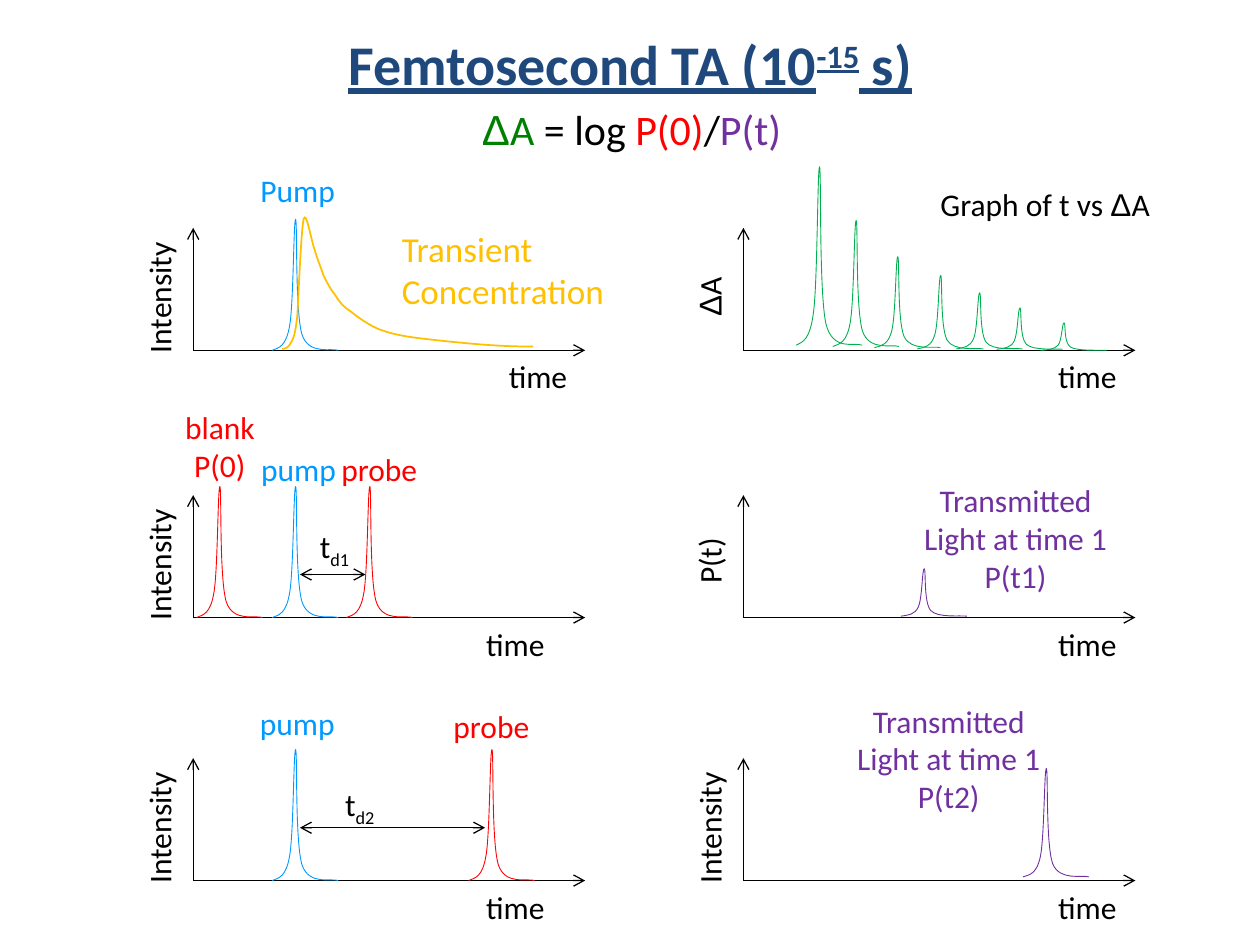
"""Build a slide on femtosecond transient absorption with six signal panels."""
from dataclasses import dataclass

from lxml import etree
from pptx import Presentation
from pptx.dml.color import RGBColor
from pptx.enum.shapes import MSO_CONNECTOR
from pptx.enum.text import MSO_ANCHOR, MSO_AUTO_SIZE, PP_ALIGN
from pptx.oxml.ns import qn
from pptx.util import Pt

STRAIGHT = MSO_CONNECTOR.STRAIGHT
MIDDLE = MSO_ANCHOR.MIDDLE
FIT, NO_FIT = MSO_AUTO_SIZE.SHAPE_TO_FIT_TEXT, MSO_AUTO_SIZE.NONE
LEFT, CENTER = PP_ALIGN.LEFT, PP_ALIGN.CENTER

PEAK = [(0, 1), (4, 0.98), (8, 0.97), (10, 0.81), (12.2, 0.64), (12.2, 0),
        (13.4, 0.01), (14.4, 0.03), (13, 0.7), (17, 0.88), (21, 1.04),
        (34, 0.98), (37.7, 1)]
DECAY = [(161.3, 199.4), (162.7, 199.4), (164.9, 198.7), (166.3, 195.8),
         (167.8, 193), (168.5, 192.2), (169.9, 180.7),
         (170.6, 168.5), (172.1, 131.8), (173.5, 125.3),
         (175, 119.5), (177.8, 137.5), (180, 143.3),
         (181.4, 148.3), (183.6, 153.4), (185, 157.7),
         (187.2, 162), (188.6, 164.9), (191.5, 168.5),
         (193.7, 172.1), (195.8, 175), (200.2, 177.8),
         (203.8, 180.7), (209.5, 185), (216, 187.9),
         (221.8, 190.1), (226.8, 191.5), (237.6, 193),
         (248.4, 194.4), (270, 196.6), (281.5, 197.3),
         (293, 198), (298.8, 198), (304.6, 198)]
GREEN_PEAKS = [(455, 94.3, 197.3), (475.9, 125.3, 198), (499.7, 146.2, 198.7),
               (524.2, 157, 199.4), (546.5, 167, 199.4),
               (569.5, 175.7, 199.6), (594.7, 184.3, 200.2)]
COL_1, COL_2 = 110.4, 424.8
ROWS = (200.2, 352.9, 503.2)
PUMP_X, PEAK_H = 155.6, 75.6


@dataclass(frozen=True)
class Theme:
    """Colours, fonts and type sizes of the slide."""
    black: str = "000000"
    pump: str = "0099FF"
    probe: str = "FF0000"
    transient: str = "FFC000"
    transmitted: str = "7030A0"
    absorbance: str = "00B050"
    delta: str = "008000"
    title: str = "1F497D"
    font: str = "Calibri"
    symbol_font: str = "Arial"
    body: int = 18
    large: int = 20
    formula: int = 24
    heading: int = 32


T = Theme()


def add_text(s, box, paras, size=T.body, align=LEFT, wrap=True, rotation=0, fit=FIT):
    """Add a text box from paragraphs of (text, colour, baseline percent) runs."""
    sp = s.shapes.add_textbox(*map(Pt, box))
    sp.rotation = rotation
    tf = sp.text_frame
    tf.word_wrap = wrap
    tf.auto_size = fit
    for i, runs in enumerate(paras):
        p = tf.add_paragraph() if i else tf.paragraphs[0]
        p.alignment = align
        for text, color, *baseline in runs:
            r = p.add_run()
            r.text = text
            r.font.size = Pt(size)
            r.font.name = T.symbol_font if text == "Δ" else T.font
            r.font.color.rgb = RGBColor.from_string(color)
            if baseline:
                r.font._element.set("baseline", str(baseline[0] * 1000))
    return sp


def add_arrow(s, x1, y1, x2, y2, ends=("tailEnd",)):
    """Add a thin straight line with open arrowheads at the named ends."""
    cn = s.shapes.add_connector(STRAIGHT, *map(Pt, (x1, y1, x2, y2)))
    cn.line.color.rgb = RGBColor.from_string(T.black)
    cn.line.width = Pt(0.75)
    sppr = cn._element.spPr
    for end in ends:
        etree.SubElement(sppr.find(qn("a:ln")), qn(f"a:{end}"), type="arrow")
    etree.SubElement(sppr, qn("a:effectLst"))


def add_curve(s, points, color, width=0.5):
    """Add an open Bezier curve from a start point and triples of points."""
    pts = [(Pt(x), Pt(y)) for x, y in points]
    fb = s.shapes.build_freeform(*pts[0])
    fb.add_line_segments(pts[1:], close=False)
    sp = fb.convert_to_shape()
    sp.shadow.inherit = False
    sp.fill.background()
    sp.line.color.rgb = RGBColor.from_string(color)
    sp.line.width = Pt(width)
    segments = list(sp._element.iter(qn("a:lnTo")))
    for i in range(0, len(segments), 3):
        bezier = etree.Element(qn("a:cubicBezTo"))
        segments[i].addprevious(bezier)
        for segment in segments[i:i + 3]:
            bezier.append(segment[0])
            segment.getparent().remove(segment)


def add_peak(s, left, top, base, color):
    """Add a sharp pulse between its top and its baseline."""
    add_curve(s, [(left + x, top + y * (base - top)) for x, y in PEAK], color)


def add_panel(s, x, base, label, label_w, time_x):
    """Add a pair of axes with a rotated label and a time caption."""
    add_arrow(s, x, base, x, base - 70)
    add_arrow(s, x, base, x + 224, base)
    box = (x - 19.5 - label_w / 2, base - 49, label_w, 29)
    add_text(s, box, [label], rotation=270)
    add_text(s, (time_x, base + 0.5, 48.2, 29), [[("time", T.black)]])


def add_delay(s, x1, x2, y, label_x, label_y, index):
    """Add a double arrow between pump and probe with its delay label."""
    add_arrow(s, x1, y, x2, y, ("headEnd", "tailEnd"))
    add_text(s, (label_x, label_y, 33, 29),
             [[("t", T.black), (index, T.black, -25)]], wrap=False)


def add_header(s):
    """Add the title and the formula."""
    title = add_text(s, (36, 0, 648, 72), [[("Femtosecond TA (10", T.title),
                     ("-15", T.title, 30), (" s)", T.title)]],
                     size=T.heading, align=CENTER, fit=NO_FIT)
    title.text_frame.vertical_anchor = MIDDLE
    for r in title.text_frame.paragraphs[0].runs:
        r.font.bold = r.font.underline = True
    runs = [("Δ", T.delta), ("A", T.delta), (" = log ", T.black),
            ("P(0)", T.probe), ("/", T.black), ("P(t)", T.transmitted)]
    tf = add_text(s, (248.4, 59, 252.7, 39), [runs], size=T.formula, fit=NO_FIT).text_frame
    tf.margin_left = Pt(27)
    tf.margin_top = tf.margin_right = tf.margin_bottom = 0


def add_panels(s):
    """Add the six pairs of axes."""
    intensity = [("Intensity", T.black)], 86.4
    pt = [("P(t)", T.black)], 44.6
    delta_a = [("Δ", T.black), ("A", T.black)], 44
    for base, time_x, right in zip(ROWS, (283.7, 270.7, 270.7), (delta_a, pt, intensity)):
        add_panel(s, COL_1, base, *intensity, time_x)
        add_panel(s, COL_2, base, *right, 597.6)


def add_signals(s):
    """Add all pulses, the decay curve and the delays."""
    for base in ROWS:
        add_peak(s, PUMP_X, base - PEAK_H, base, T.pump)
    for left, base in ((112.3, ROWS[1]), (198, ROWS[1]), (267.8, ROWS[2])):
        add_peak(s, left, base - PEAK_H, base, T.probe)
    for peak in GREEN_PEAKS:
        add_peak(s, *peak, T.absorbance)
    for peak in ((514.8, 324.7, 352.1), (584.6, 438.5, 501.1)):
        add_peak(s, *peak, T.transmitted)
    add_curve(s, DECAY, T.transient, 1)
    add_delay(s, 171.4, 208.8, 328.3, 175.7, 297.4, "d1")
    add_delay(s, 171.4, 277.2, 473, 190.1, 445, "d2")


def add_captions(s):
    """Add the captions of the signals."""
    add_text(s, (141.8, 94.3, 57.6, 29), [[("Pump", T.pump)]], wrap=False)
    add_text(s, (222.5, 126.7, 130.3, 55.4),
             [[("Transient Concentration", T.transient)]], size=T.large)
    add_text(s, (529.9, 102.2, 134.6, 29),
             [[("Graph of t vs ", T.black), ("Δ", T.black), ("A", T.black)]],
             align=CENTER, wrap=False)
    for text, color, box in (
            ("pump", T.pump, (123.8, 253.4, 93.6, 29)),
            ("pump", T.pump, (123.1, 398.9, 93.6, 29)),
            ("probe", T.probe, (146.9, 253.8, 139.7, 29)),
            ("probe", T.probe, (215.3, 400.3, 131, 29)),
            ("blank P(0)", T.probe, (93.6, 229.7, 64.1, 51))):
        add_text(s, box, [[(text, color)]], align=CENTER)
    for name, left, top in (("P(t1)", 513.4, 271.6), ("P(t2)", 475.2, 397.4)):
        add_text(s, (left, top, 133.9, 72.7),
                 [[("Transmitted Light at time 1", T.transmitted)],
                  [(name, T.transmitted)]], align=CENTER)


def main():
    """Create the presentation and save it."""
    prs = Presentation()
    prs.slide_width, prs.slide_height = Pt(720), Pt(540)
    s = prs.slides.add_slide(prs.slide_layouts[6])
    add_panels(s)
    add_signals(s)
    add_captions(s)
    add_header(s)
    prs.save("out.pptx")


if __name__ == "__main__":
    main()
